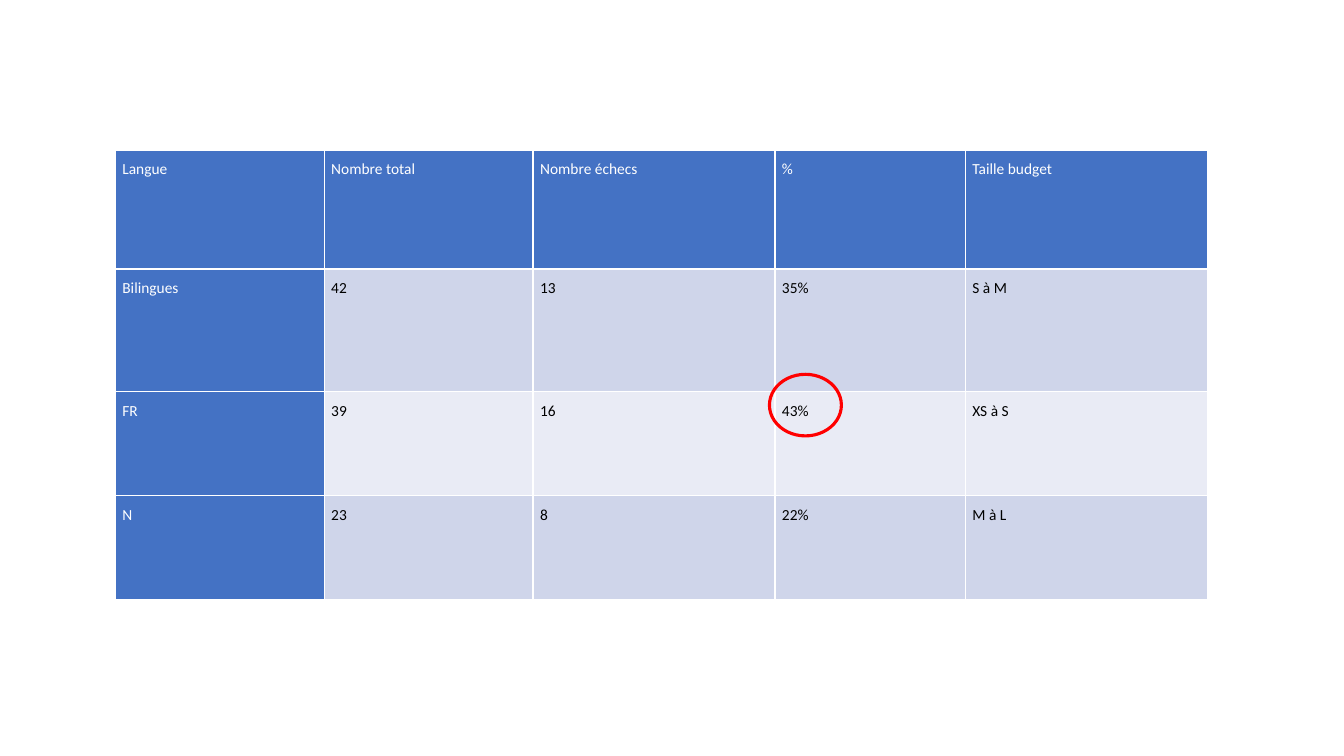
from lxml.etree import SubElement
from pptx import Presentation
from pptx.dml.color import RGBColor
from pptx.enum.shapes import MSO_SHAPE
from pptx.oxml.ns import qn
from pptx.util import Pt

COLORS = {
    "header": "4472C4",
    "band_dark": "CFD5EA",
    "band_light": "E9EBF5",
    "white": "FFFFFF",
    "black": "000000",
    "highlight": "FF0000",
}
ROWS = [
    ["Langue", "Nombre total", "Nombre échecs", "%", "Taille budget"],
    ["Bilingues", "42", "13", "35%", "S à M"],
    ["FR", "39", "16", "43%", "XS à S"],
    ["N", "23", "8", "22%", "M à L"],
]
COLUMN_WIDTHS = [149.2, 149.2, 172.8, 136, 172.8]
ROW_HEIGHTS = [84.6, 87.8, 74.3, 74.3]


def color(name):
    """Return the named colour."""
    return RGBColor.from_string(COLORS[name])


def add_borders(cell):
    """Give the cell a thin white line on every side."""
    properties = cell._tc.get_or_add_tcPr()
    for side in ("lnL", "lnR", "lnT", "lnB"):
        line = SubElement(properties, qn(f"a:{side}"), w=str(Pt(1)))
        fill = SubElement(line, qn("a:solidFill"))
        SubElement(fill, qn("a:srgbClr"), val=COLORS["white"])


def format_cell(cell, text, fill_name, font_name):
    """Fill one cell and set its text."""
    add_borders(cell)
    cell.fill.solid()
    cell.fill.fore_color.rgb = color(fill_name)
    cell.margin_left = cell.margin_right = Pt(5)
    cell.margin_top = cell.margin_bottom = 0
    cell.text = text
    paragraph = cell.text_frame.paragraphs[0]
    paragraph.line_spacing = 1.5
    paragraph.font.name = "Calibri"
    paragraph.font.size = Pt(11)
    paragraph.font.bold = False
    paragraph.font.color.rgb = color(font_name)


def add_language_table(page, left, top):
    """Add the table of failures by language."""
    frame = page.shapes.add_table(
        len(ROWS), len(COLUMN_WIDTHS), Pt(left), Pt(top),
        Pt(sum(COLUMN_WIDTHS)), Pt(sum(ROW_HEIGHTS)))
    table = frame.table
    table.first_col = True
    for column, width in zip(table.columns, COLUMN_WIDTHS):
        column.width = Pt(width)
    for row_index, (height, texts) in enumerate(zip(ROW_HEIGHTS, ROWS)):
        table.rows[row_index].height = Pt(height)
        band = "band_dark" if row_index % 2 else "band_light"
        for column_index, text in enumerate(texts):
            heading = row_index == 0 or column_index == 0
            format_cell(table.cell(row_index, column_index), text,
                        "header" if heading else band,
                        "white" if heading else "black")


def add_highlight(page, left, top):
    """Circle the value of the cell that starts at the given corner."""
    circle = page.shapes.add_shape(
        MSO_SHAPE.OVAL, Pt(left - 4), Pt(top - 12.5), Pt(51.4), Pt(44))
    circle.shadow.inherit = False
    circle.fill.background()
    circle.line.color.rgb = color("highlight")
    circle.line.width = Pt(2.25)


def main():
    """Build and save the deck."""
    deck = Presentation()
    deck.slide_width, deck.slide_height = Pt(960), Pt(540)
    page = deck.slides.add_slide(deck.slide_layouts[6])
    left, top = 82.4, 107.5
    add_language_table(page, left, top)
    add_highlight(page, left + sum(COLUMN_WIDTHS[:3]), top + sum(ROW_HEIGHTS[:2]))
    deck.save("out.pptx")


if __name__ == "__main__":
    main()
